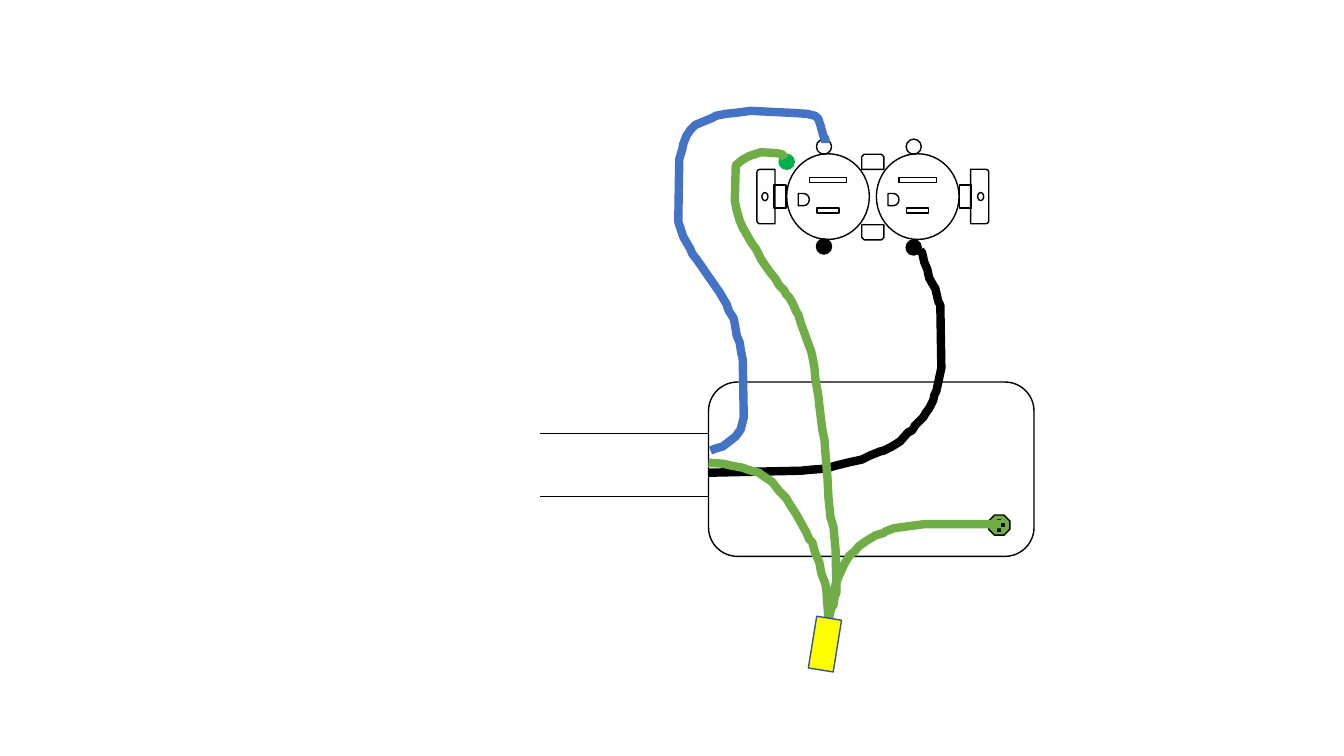
from lxml import etree
from pptx import Presentation
from pptx.dml.color import RGBColor
from pptx.enum.shapes import MSO_CONNECTOR, MSO_SHAPE
from pptx.oxml.ns import qn
from pptx.util import Cm, Pt

STRAIGHT = MSO_CONNECTOR.STRAIGHT
RECT = MSO_SHAPE.RECTANGLE
BOX = MSO_SHAPE.ROUNDED_RECTANGLE
OVAL = MSO_SHAPE.OVAL
GROUND_SLOT = MSO_SHAPE.FLOWCHART_DELAY
STRAP_END = MSO_SHAPE.ROUND_2_SAME_RECTANGLE
BRIDGE = MSO_SHAPE.SNIP_2_SAME_RECTANGLE
OCTAGON = MSO_SHAPE.OCTAGON

COLORS = {
    "black": "000000",
    "blue": "4472C4",
    "green": "70AD47",
    "screw": "00B050",
    "yellow": "FFFF00",
    "navy": "325491",
}
CM_PER_INCH = 2.54

JUNCTION_BOX = (7.03, 3.79, 3.23, 1.73)
CABLE_EDGES = [4.3, 4.92]
CABLE_LEFT = 5.36

OUTLET_LEFTS = [7.79, 8.68]
OUTLET_PARTS = [
    (OVAL, 0, 1.54, 0.85, 0.82, 90),
    (RECT, 0.4, 1.6, 0.05, 0.37, 90),
    (RECT, 0.4, 1.98, 0.05, 0.22, 90),
    (GROUND_SLOT, 0.13, 1.92, 0.11, 0.12, 0),
]
STRAP_CENTER = 8.66
STRAP_PARTS = [
    (STRAP_END, 1.06, 1.86, 0.54, 0.18),
    (RECT, 0.92, 1.89, 0.23, 0.12),
    (OVAL, 1.07, 1.92, 0.08, 0.06),
]
STRAP_SIDES = [(1, 90), (-1, 270)]
BRIDGES = [(2.23, 180), (1.53, 0)]
TERMINALS = [
    (8.1, 2.37, "black", "black"),
    (8.99, 2.38, "black", "black"),
    (8.99, 1.38, None, "black"),
    (7.73, 1.53, "screw", "screw"),
    (8.1, 1.38, None, "black"),
]
SCREW_HEAD = (9.81, 5.11, 0.21, 0.2)
SCREW_CROSS = [(9.91, 5.15, 9.91, 5.28), (9.97, 5.21, 9.85, 5.21)]
WIRE_NUT = (8.06, 6.13, 0.25, 0.52)

NEUTRAL_WIRE = [
    (7.05, 4.47), (7.1, 4.45), (7.17, 4.43), (7.21, 4.4), (7.3, 4.33),
    (7.35, 4.26), (7.38, 4.14), (7.37, 3.57), (7.35, 3.47), (7.34, 3.4),
    (7.31, 3.33), (7.29, 3.21), (7.28, 3.16), (7.23, 3.08), (7.21, 3.02),
    (7.14, 2.9), (7.07, 2.8), (6.98, 2.67), (6.91, 2.57), (6.87, 2.52),
    (6.85, 2.47), (6.78, 2.35), (6.74, 2.23), (6.73, 2.2), (6.74, 1.58),
    (6.77, 1.48), (6.78, 1.43), (6.81, 1.35), (6.85, 1.29), (6.9, 1.24),
    (6.97, 1.21), (7.07, 1.17), (7.1, 1.15), (7.2, 1.13), (7.3, 1.12),
    (7.45, 1.1), (7.85, 1.12), (8.01, 1.13), (8.09, 1.15), (8.12, 1.18),
    (8.14, 1.24), (8.17, 1.35), (8.19, 1.38), (8.19, 1.42),
]
HOT_WIRE = [
    (7.03, 4.69), (7.95, 4.67), (8.05, 4.66), (8.19, 4.65), (8.29, 4.62),
    (8.41, 4.59), (8.55, 4.56), (8.63, 4.52), (8.73, 4.48), (8.77, 4.47),
    (8.85, 4.43), (8.93, 4.38), (9.01, 4.29), (9.05, 4.27), (9.08, 4.22),
    (9.16, 4.14), (9.19, 4.09), (9.22, 4.05), (9.26, 3.97), (9.27, 3.92),
    (9.29, 3.88), (9.31, 3.79), (9.34, 3.65), (9.33, 3.03), (9.31, 2.99),
    (9.28, 2.86), (9.26, 2.83), (9.22, 2.76), (9.2, 2.67), (9.17, 2.6),
    (9.15, 2.51), (9.13, 2.48),
]
BOX_GROUND_WIRE = [
    (7.03, 4.59), (7.17, 4.6), (7.26, 4.62), (7.37, 4.64), (7.42, 4.66),
    (7.53, 4.69), (7.57, 4.72), (7.66, 4.78), (7.73, 4.87), (7.8, 4.94),
    (7.84, 5.01), (7.9, 5.1), (7.95, 5.19), (8, 5.28), (8.03, 5.35),
    (8.06, 5.38), (8.09, 5.49), (8.13, 5.58), (8.15, 5.69), (8.19, 5.79),
    (8.2, 5.86), (8.22, 6.14), (8.22, 6.18), (8.24, 6.05), (8.26, 5.98),
    (8.28, 5.84), (8.3, 5.77), (8.33, 5.7), (8.38, 5.59), (8.43, 5.51),
    (8.48, 5.47), (8.52, 5.42), (8.59, 5.37), (8.69, 5.31), (8.76, 5.29),
    (8.79, 5.27), (8.87, 5.24), (9.02, 5.22), (9.17, 5.2), (9.93, 5.2),
]
OUTLET_GROUND_WIRE = [
    (8.23, 6.1), (8.24, 6.05), (8.27, 6), (8.28, 5.93), (8.3, 5.87),
    (8.29, 5.45), (8.27, 5.23), (8.24, 5.13), (8.22, 4.94), (8.21, 4.74),
    (8.19, 4.5), (8.18, 4.36), (8.16, 4.27), (8.13, 4.03), (8.12, 3.93),
    (8.09, 3.76), (8.08, 3.64), (8.05, 3.49), (8.02, 3.41), (7.98, 3.3),
    (7.95, 3.22), (7.92, 3.12), (7.9, 3.09), (7.87, 3.02), (7.83, 2.95),
    (7.8, 2.92), (7.78, 2.88), (7.73, 2.83), (7.69, 2.76), (7.64, 2.7),
    (7.59, 2.63), (7.55, 2.57), (7.5, 2.47), (7.45, 2.4), (7.41, 2.33),
    (7.37, 2.26), (7.34, 2.19), (7.31, 2.09), (7.29, 1.99), (7.3, 1.64),
    (7.36, 1.59), (7.43, 1.55), (7.55, 1.51), (7.71, 1.52), (7.76, 1.53),
    (7.79, 1.57),
]


def length(inches):
    return Cm(inches * CM_PER_INCH)


def color(name):
    return RGBColor.from_string(COLORS[name])


def style(sp, fill, line, width):
    sp.shadow.inherit = False
    if fill:
        sp.fill.solid()
        sp.fill.fore_color.rgb = color(fill)
    else:
        sp.fill.background()
    sp.line.color.rgb = color(line)
    sp.line.width = Pt(width)


def add_part(s, kind, x, y, w, h, rot=0, fill=None, line="black"):
    sp = s.shapes.add_shape(kind, *map(length, (x, y, w, h)))
    sp.rotation = rot
    style(sp, fill, line, 1)


def add_line(s, ends, width):
    cn = s.shapes.add_connector(STRAIGHT, *map(length, ends))
    cn.line.color.rgb = color("black")
    cn.line.width = Pt(width)
    etree.SubElement(cn._element.spPr, qn("a:effectLst"))


def add_wire(s, points, name):
    start, *rest = [(length(x), length(y)) for x, y in points]
    builder = s.shapes.build_freeform(*start)
    builder.add_line_segments(rest, close=False)
    style(builder.convert_to_shape(), None, name, 6)


def main():
    prs = Presentation()
    prs.slide_width, prs.slide_height = Cm(33.87), Cm(19.05)
    s = prs.slides.add_slide(prs.slide_layouts[6])

    add_part(s, BOX, *JUNCTION_BOX)
    for y in CABLE_EDGES:
        add_line(s, (JUNCTION_BOX[0], y, CABLE_LEFT, y), 0.5)

    for left in OUTLET_LEFTS:
        for kind, dx, y, w, h, rot in OUTLET_PARTS:
            add_part(s, kind, left + dx, y, w, h, rot)
    for side, rot in STRAP_SIDES:
        for kind, offset, y, w, h in STRAP_PARTS:
            add_part(s, kind, STRAP_CENTER + side * offset - w / 2, y, w, h, rot)
    for x, y, fill, line in TERMINALS:
        add_part(s, OVAL, x, y, 0.15, 0.15, 90, fill, line)
    for y, rot in BRIDGES:
        add_part(s, BRIDGE, 8.55, y, 0.22, 0.15, rot)

    add_wire(s, NEUTRAL_WIRE, "blue")
    add_part(s, OCTAGON, *SCREW_HEAD, fill="green")
    for ends in SCREW_CROSS:
        add_line(s, ends, 3)
    add_wire(s, HOT_WIRE, "black")
    add_wire(s, BOX_GROUND_WIRE, "green")
    add_wire(s, OUTLET_GROUND_WIRE, "green")
    add_part(s, RECT, *WIRE_NUT, rot=9.2, fill="yellow", line="navy")

    prs.save("out.pptx")


if __name__ == "__main__":
    main()
